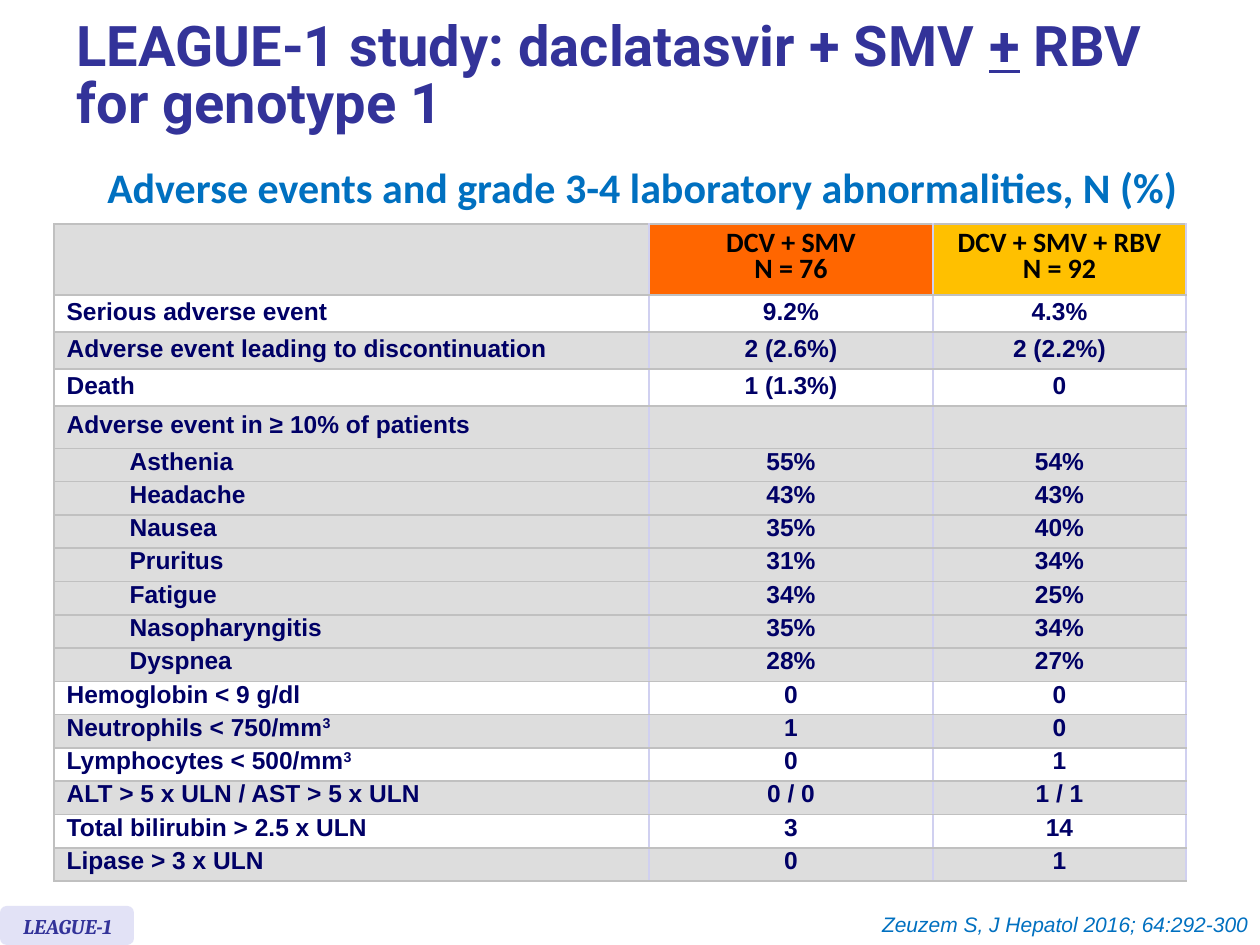
from lxml.etree import SubElement
from pptx import Presentation
from pptx.dml.color import RGBColor
from pptx.enum.shapes import MSO_SHAPE as Shape
from pptx.enum.text import MSO_ANCHOR as Anchor, MSO_AUTO_SIZE as AutoSize, PP_ALIGN as Align
from pptx.oxml.ns import qn
from pptx.util import Emu, Pt

GRAY, WHITE, ORANGE, AMBER = "DDDDDD", "FFFFFF", "FF6600", "FFC000"
RULE, DIVIDER = "C0C0C0", "D0D0F0"
NAVY, INDIGO, BLUE, LAVENDER = "000066", "333399", "0070C0", "E2E2F6"

COLUMN_WIDTHS = (595, 284, 253)
HEADER_HEIGHT = 71
HEADINGS = ("", "DCV + SMV\nN = 76", "DCV + SMV + RBV\nN = 92")
SUMMARY = (
    ("Serious adverse event", "9.2%", "4.3%"),
    ("Adverse event leading to discontinuation", "2 (2.6%)", "2 (2.2%)"),
    ("Death", "1 (1.3%)", "0"),
    ("Adverse event in ≥ 10% of patients", "", ""),
)
COMMON_EVENTS = (
    ("Asthenia", "55%", "54%"),
    ("Headache", "43%", "43%"),
    ("Nausea", "35%", "40%"),
    ("Pruritus", "31%", "34%"),
    ("Fatigue", "34%", "25%"),
    ("Nasopharyngitis", "35%", "34%"),
    ("Dyspnea", "28%", "27%"),
)
LABORATORY = (
    ("Hemoglobin < 9 g/dl", "0", "0"),
    ("Neutrophils < 750/mm^3", "1", "0"),
    ("Lymphocytes < 500/mm^3", "0", "1"),
    ("ALT > 5 x ULN / AST > 5 x ULN", "0 / 0", "1 / 1"),
    ("Total bilirubin > 2.5 x ULN", "3", "14"),
    ("Lipase > 3 x ULN", "0", "1"),
)


def px(length):
    return Emu(round(length * 914400 / 126))


def rgb(value):
    return RGBColor.from_string(value)


class SafetySlide:
    """Holds the slide and the styles of its title, texts, badge and table."""

    def __init__(self, deck):
        self.slide = deck.slides.add_slide(deck.slide_layouts[5])

    def style(self, run, font, size, color, bold=False, italic=False):
        run.font.name, run.font.size = font, Pt(size)
        run.font.bold, run.font.italic = bold, italic
        run.font.color.rgb = rgb(color)

    def title(self, box, parts, underlined):
        heading = self.slide.shapes.title
        heading.left, heading.top, heading.width, heading.height = map(px, box)
        frame = heading.text_frame
        frame.auto_size, frame.vertical_anchor = AutoSize.NONE, Anchor.MIDDLE
        paragraph = frame.paragraphs[0]
        paragraph.alignment, paragraph.line_spacing = Align.LEFT, 0.85
        for part in parts:
            run = paragraph.add_run()
            run.text = part
            self.style(run, "Roboto", 32, INDIGO, bold=True)
            run.font.underline = part == underlined

    def text(self, box, words, font, size, color, align=Align.LEFT,
             spacing=None, bold=False, italic=False, parent=None):
        holder = parent or self.slide
        frame = holder.shapes.add_textbox(*map(px, box)).text_frame
        frame.word_wrap = True
        frame.text = words
        paragraph = frame.paragraphs[0]
        paragraph.alignment = align
        paragraph.line_spacing = Pt(spacing) if spacing else None
        self.style(paragraph.runs[0], font, size, color, bold, italic)

    def badge(self, box, label_box, words):
        group = self.slide.shapes.add_group_shape()
        plate = group.shapes.add_shape(Shape.ROUNDED_RECTANGLE, *map(px, box))
        plate.shadow.inherit = False
        plate.fill.solid()
        plate.fill.fore_color.rgb = rgb(LAVENDER)
        plate.line.fill.background()
        self.text(label_box, words, "Cambria", 12, INDIGO, bold=True, italic=True, parent=group)

    def table(self, box, widths, heights):
        grid = self.slide.shapes.add_table(len(heights), len(widths), *map(px, box)).table
        grid.first_row = grid.horz_banding = False
        for column, width in zip(grid.columns, widths):
            column.width = px(width)
        for row, height in zip(grid.rows, heights):
            row.height = px(height)
        return grid

    def borders(self, cell, left):
        properties = cell._tc.get_or_add_tcPr()
        for side, color in (("L", left), ("R", DIVIDER), ("T", RULE), ("B", RULE)):
            line = SubElement(properties, qn(f"a:ln{side}"), w=str(Pt(1)))
            SubElement(SubElement(line, qn("a:solidFill")), qn("a:srgbClr"), val=color)

    def cell(self, cell, words, fill, font, size, color, spacing, first, indented=False):
        self.borders(cell, RULE if first else DIVIDER)
        cell.fill.solid()
        cell.fill.fore_color.rgb = rgb(fill)
        cell.vertical_anchor = Anchor.MIDDLE
        base, _, exponent = words.partition("^")
        cell.text_frame.text = base
        for paragraph in cell.text_frame.paragraphs:
            paragraph.alignment = Align.LEFT if first else Align.CENTER
            paragraph.line_spacing = Pt(spacing)
            if indented:
                paragraph.level = 1
                paragraph._p.get_or_add_pPr().set("marL", str(px(63)))
            if exponent:
                power = paragraph.add_run()
                power.text = exponent
                power._r.get_or_add_rPr().set("baseline", "30000")
            for run in paragraph.runs:
                self.style(run, font, size, color, bold=True)
            if not words:
                SubElement(paragraph._p, qn("a:endParaRPr"), sz=str(size * 100))

    def adverse_events(self, left, top):
        body = SUMMARY + COMMON_EVENTS + LABORATORY
        heights = [HEADER_HEIGHT] + [37] * 3 + [40] + [33] * (len(body) - len(SUMMARY))
        grid = self.table((left, top, sum(COLUMN_WIDTHS), sum(heights)), COLUMN_WIDTHS, heights)
        for column, (words, fill) in enumerate(zip(HEADINGS, (GRAY, ORANGE, AMBER))):
            self.cell(grid.cell(0, column), words, fill, "Calibri", 16, "000000", 15.2, column == 0)
        lab_start = len(SUMMARY) + len(COMMON_EVENTS)
        for index, values in enumerate(body):
            common = len(SUMMARY) <= index < lab_start
            stripe = index - lab_start if index >= lab_start else index
            fill = GRAY if common or stripe % 2 else WHITE
            spacing = 13.8 if index < len(SUMMARY) else 11.8
            for column, words in enumerate(values):
                self.cell(grid.cell(index + 1, column), words, fill, "Arial", 14, NAVY,
                          spacing, column == 0, common and column == 0)


def main():
    deck = Presentation()
    deck.slide_width, deck.slide_height = px(1260), px(945)
    page = SafetySlide(deck)
    page.adverse_events(54, 224)
    page.text((25, 179, 1235, 44), "Adverse events and grade 3-4 laboratory abnormalities, N (%)",
              "Calibri", 24, BLUE, Align.CENTER, 15.2, bold=True)
    page.title((64, 10, 1150, 135),
               ("LEAGUE-1 study: daclatasvir + SMV ", "+", " RBV for genotype 1"), "+")
    page.badge((0, 906, 134, 39), (11, 907, 126, 38), "LEAGUE-1")
    page.text((689, 905, 572, 38), "Zeuzem S, J Hepatol 2016; 64:292-300",
              "Arial", 12, BLUE, Align.RIGHT, italic=True)
    deck.save("out.pptx")


if __name__ == "__main__":
    main()
